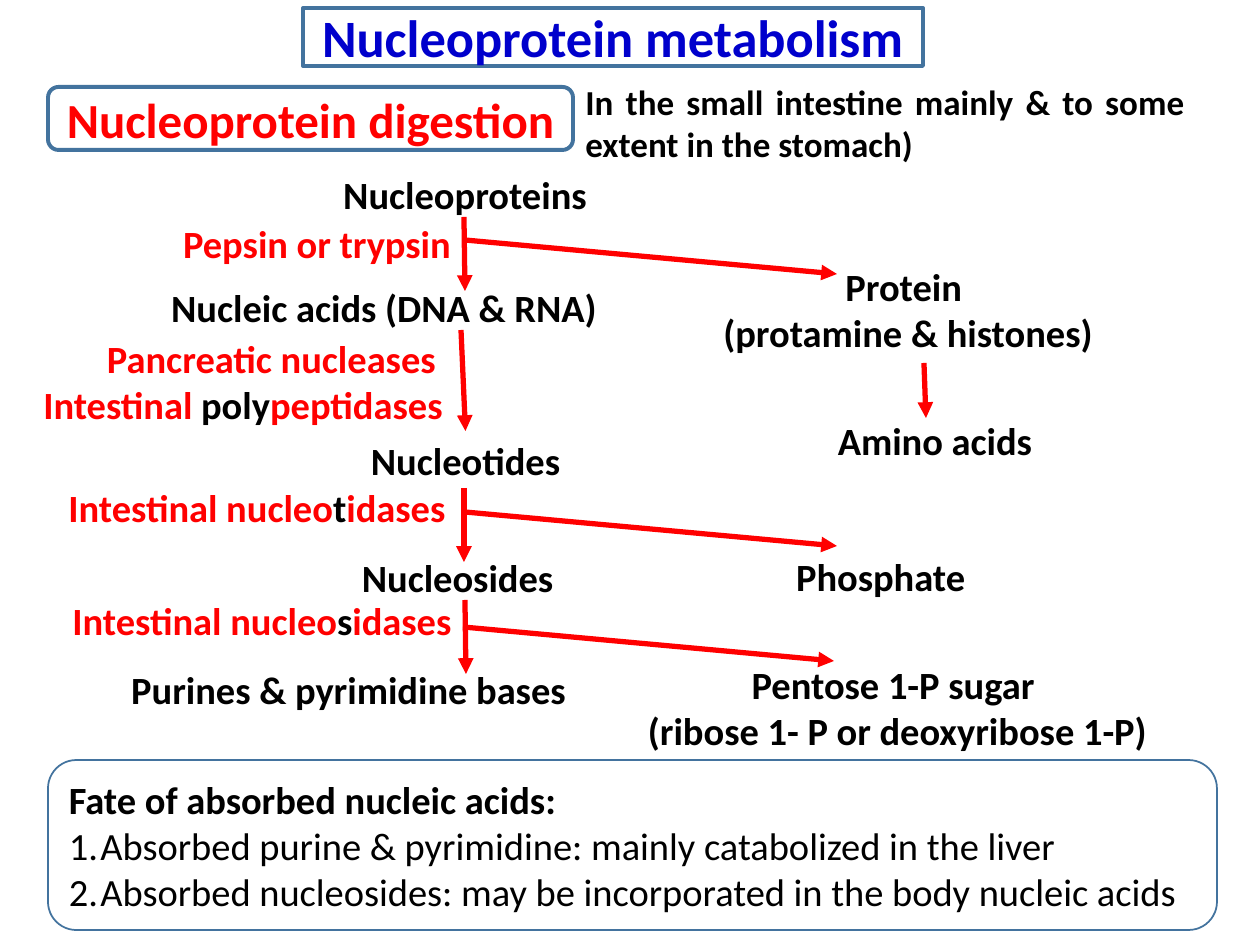
"""Build the nucleoprotein metabolism slide."""
from lxml import etree
from pptx import Presentation, util as u
from pptx.dml.color import RGBColor
from pptx.enum import shapes as sh, text as tx
from pptx.oxml import ns

PX = 914400 / 126
RED, BLACK, BLUE, EDGE = "FF0000", "000000", "0000CC", "43739E"
MID = tx.PP_ALIGN.CENTER


def place(box, *rect):
    box.left, box.top, box.width, box.height = [u.Emu(round(n * PX)) for n in rect]


def write(box, rows, size, align=MID, bold=True):
    frame = box.text_frame
    frame.word_wrap = True
    frame.auto_size = tx.MSO_AUTO_SIZE.NONE
    for i, row in enumerate(rows):
        para = frame.add_paragraph() if i else frame.paragraphs[0]
        para.alignment = align
        para.space_before = u.Pt(0)
        for words, hue in row:
            run = para.add_run()
            run.text = words
            font = run.font
            font.name, font.size, font.bold = "Calibri", u.Pt(size), bold
            font.color.rgb = RGBColor.from_string(hue)
    return frame.paragraphs


deck = Presentation()
deck.slide_width, deck.slide_height = u.Inches(10), u.Inches(7.5)
slide = deck.slides.add_slide(deck.slide_layouts[1])
items = slide.shapes
title, fate = items.title, slide.placeholders[1]
topic = items.add_shape(sh.MSO_SHAPE.ROUNDED_RECTANGLE, 0, 0, 0, 0)
topic.shadow.inherit = False

place(title, 303, 8, 620, 58)
place(topic, 48, 87, 525, 63)
place(fate, 48, 760, 1169, 170)
for box in (title, fate):
    geom = etree.SubElement(box.element.spPr, ns.qn("a:prstGeom"), prst="roundRect")
    etree.SubElement(geom, ns.qn("a:avLst"))
for box, width in ((title, 2.25), (topic, 2.25), (fate, 1)):
    box.fill.background()
    box.line.color.rgb = RGBColor.from_string(EDGE)
    box.line.width = u.Pt(width)
    box.text_frame.vertical_anchor = tx.MSO_ANCHOR.MIDDLE

write(title, [[("Nucleoprotein metabolism", BLUE)]], 30)
write(topic, [[("Nucleoprotein digestion", RED)]], 28)
facts = write(fate, [
    [("Fate of absorbed nucleic acids:", BLACK)],
    [("Absorbed purine & pyrimidine: mainly catabolized in the liver", BLACK)],
    [("Absorbed nucleosides: may be incorporated in the body nucleic acids", BLACK)],
], 22, tx.PP_ALIGN.LEFT, False)
facts[0].runs[0].font.bold = True
for i, para in enumerate(facts):
    props = para._p.get_or_add_pPr()
    step = u.Inches(0.25) if i else 0
    props.set("marL", str(step))
    props.set("indent", str(-step))
    if i:
        etree.SubElement(props, ns.qn("a:buFont"), typeface="+mj-lt")
        etree.SubElement(props, ns.qn("a:buAutoNum"), type="arabicPeriod")
    else:
        etree.SubElement(props, ns.qn("a:buNone"))

site = items.add_textbox(0, 0, 0, 0)
place(site, 573, 74, 624, 97)
write(site, [[("In the small intestine mainly & to some extent in the stomach)", BLACK)]],
      20, tx.PP_ALIGN.JUSTIFY)

labels = [
    (318, 165, 294, 59, [[("Nucleoproteins", BLACK)]]),
    (164, 214, 306, 59, [[("Pepsin or trypsin", RED)]]),
    (154, 278, 460, 59, [[("Nucleic acids (DNA & RNA)", BLACK)]]),
    (709, 257, 398, 106, [[("Protein ", BLACK)], [("(protamine & histones)", BLACK)]]),
    (29, 329, 428, 106, [[("Pancreatic nucleases ", RED)],
                         [("Intestinal ", RED), ("poly", BLACK), ("peptidases", RED)]]),
    (357, 431, 217, 59, [[("Nucleotides ", BLACK)]]),
    (816, 411, 238, 59, [[("Amino acids", BLACK)]]),
    (43, 478, 428, 59, [[("Intestinal nucleo", RED), ("t", BLACK), ("idases", RED)]]),
    (766, 547, 238, 59, [[("Phosphate ", BLACK)]]),
    (343, 548, 238, 59, [[("Nucleosides ", BLACK)]]),
    (48, 591, 428, 59, [[("Intestinal nucleo", RED), ("s", BLACK), ("idases", RED)]]),
    (101, 660, 495, 59, [[("Purines & pyrimidine bases", BLACK)]]),
    (614, 655, 567, 106, [[("Pentose 1-P sugar ", BLACK)],
                          [("(ribose 1- P or deoxyribose 1-P)", BLACK)]]),
]
boxes = {}
for *rect, rows in labels:
    box = items.add_textbox(0, 0, 0, 0)
    place(box, *rect)
    paras = write(box, rows, 22)
    name = rows[0][0][0].strip()
    boxes[name] = box
    if name == "Pancreatic nucleases":
        paras[0].alignment = tx.PP_ALIGN.RIGHT

arrows = [
    (464, 217, 465, 291, None),
    (465, 240, 837, 274, None),
    (461, 330, 465, 431, "Nucleotides"),
    (924, 363, 926, 418, None),
    (464, 488, 464, 562, None),
    (465, 512, 837, 546, None),
    (465, 600, 466, 674, None),
    (463, 627, 834, 661, None),
]
for *ends, goal in arrows:
    arrow = items.add_connector(sh.MSO_CONNECTOR.STRAIGHT, *[round(n * PX) for n in ends])
    if goal:
        arrow.end_connect(boxes[goal], 0)
    arrow.line.color.rgb = RGBColor.from_string(RED)
    arrow.line.width = u.Pt(3)
    etree.SubElement(arrow.line._get_or_add_ln(), ns.qn("a:tailEnd"), type="triangle")
    etree.SubElement(arrow._element.spPr, ns.qn("a:effectLst"))

deck.save("out.pptx")
